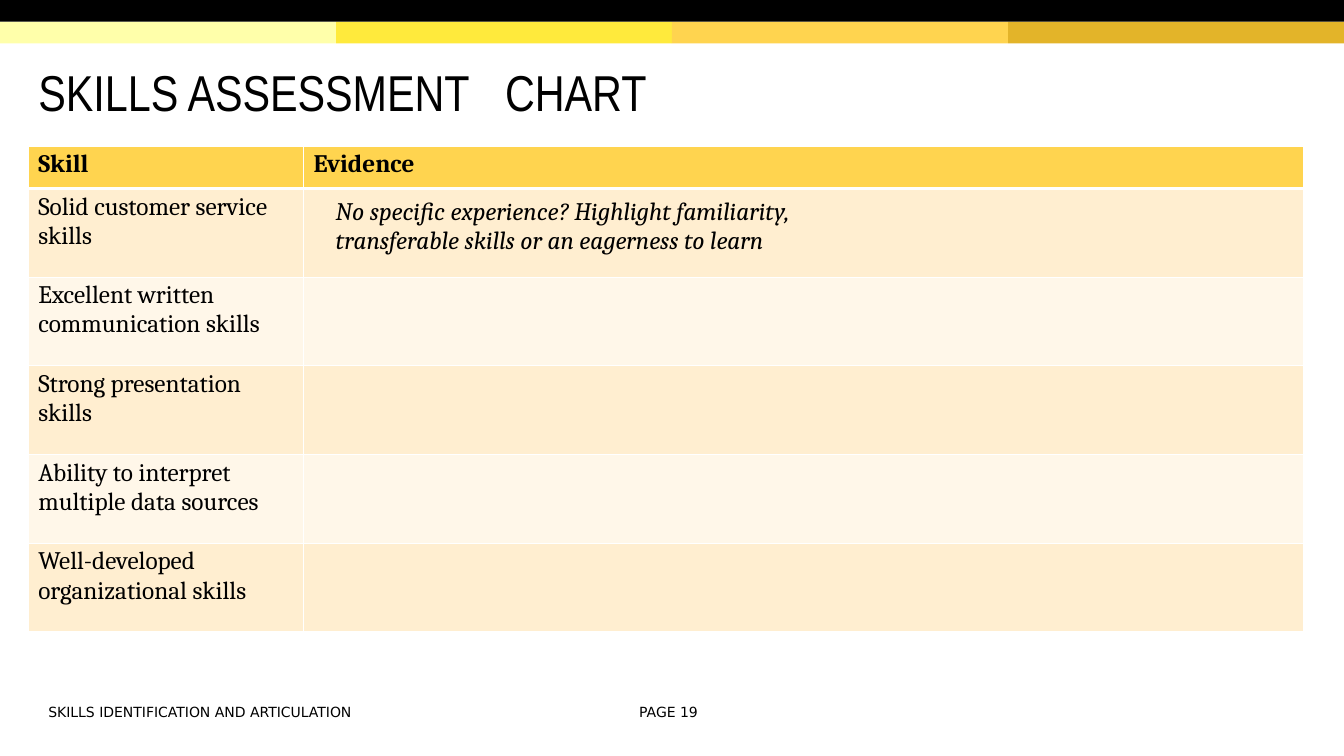
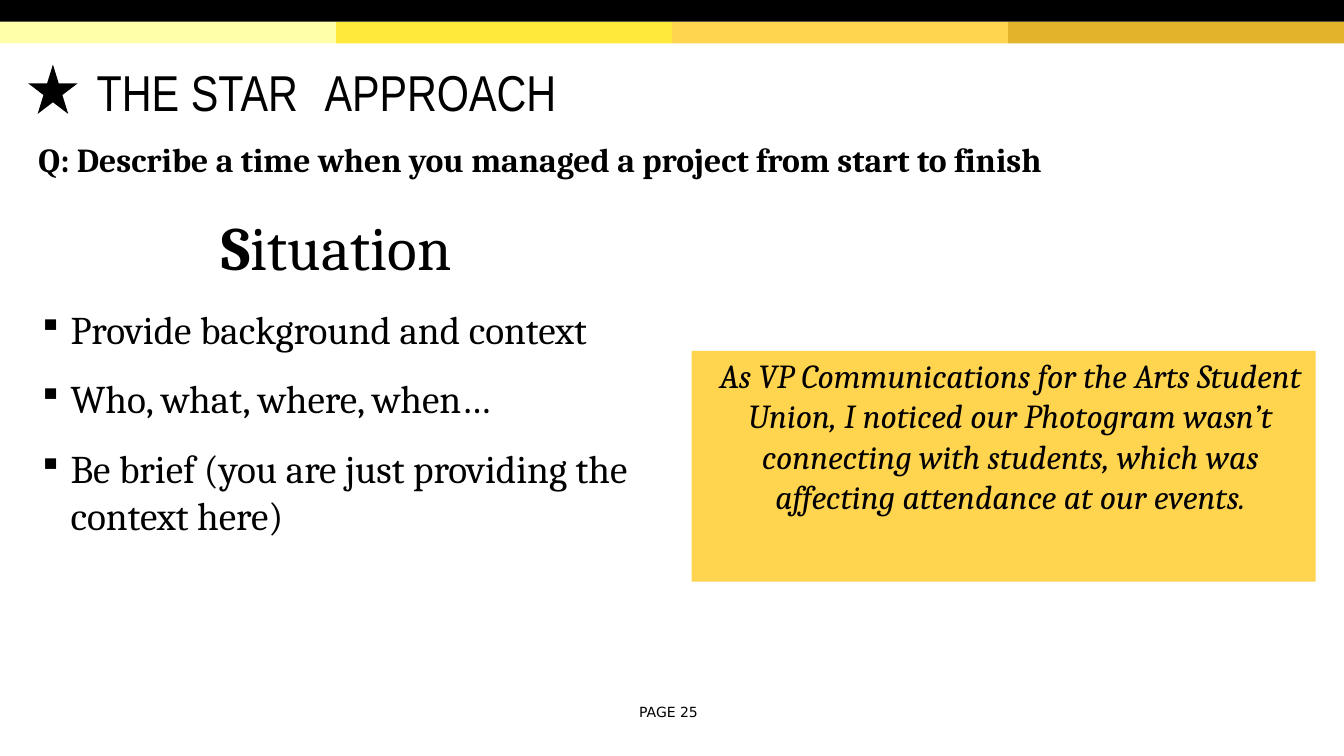
from dataclasses import dataclass

from lxml import etree
from pptx import Presentation
from pptx.dml.color import RGBColor
from pptx.enum.shapes import MSO_SHAPE as Preset
from pptx.enum.text import MSO_ANCHOR as Anchor, PP_ALIGN as Align
from pptx.oxml.ns import qn
from pptx.util import Inches, Pt

WIDTH, HEIGHT = 13.33, 7.5
BLACK, WHITE, GOLD = "000000", "FFFFFF", "FFD44F"
STRIPE_COLOURS = ("FFFFAA", "FFEA3C", GOLD, "E3B429")
ROW_COLOURS = ("FFEED0", "FFF7E9")
STRIPE_HEIGHT = 0.215
HEADING_FONT, BODY_FONT, FOOTER_FONT = "Arial Narrow", "Cambria", "DejaVu Sans"


@dataclass(frozen=True)
class Box:
    left: float
    top: float
    width: float
    height: float

    def lengths(self):
        return [Inches(v) for v in (self.left, self.top, self.width, self.height)]


@dataclass(frozen=True)
class Style:
    face: str
    size: float
    bold: bool = False
    italic: bool = False


@dataclass(frozen=True)
class SkillRow:
    skill: tuple[str, ...]
    evidence: tuple[str, ...] = ()


TITLE = Style(HEADING_FONT, 36)
FOOTER = Style(FOOTER_FONT, 10)
QUESTION = Style(BODY_FONT, 24, bold=True)
STAGE = Style(BODY_FONT, 44)
POINT = Style(BODY_FONT, 28)
EXAMPLE = Style(BODY_FONT, 24, italic=True)
HEADER = Style(BODY_FONT, 18, bold=True)
SKILL = Style(BODY_FONT, 18)
EVIDENCE = Style(BODY_FONT, 18, italic=True)

SKILL_ROWS = (
    SkillRow(("Solid customer service skills",),
             ("No specific experience? Highlight familiarity,",
              "transferable skills or an eagerness to learn")),
    SkillRow(("Excellent written communication skills",)),
    SkillRow(("Strong presentation", "skills")),
    SkillRow(("Ability to interpret multiple data sources",)),
    SkillRow(("Well-developed", "organizational skills")),
)
POINTS = (
    "Provide background and context",
    "Who, what, where, when…",
    "Be brief (you are just providing the context here)",
)


def rgb(colour: str) -> RGBColor:
    return RGBColor.from_string(colour)


def apply_style(paragraph, style: Style) -> None:
    font = paragraph.font
    font.name, font.size = style.face, Pt(style.size)
    font.bold, font.italic = style.bold, style.italic
    font.color.rgb = rgb(BLACK)


def set_indent(paragraph, left: float, first: float = 0) -> None:
    properties = paragraph._p.get_or_add_pPr()
    properties.set("marL", str(Inches(left)))
    properties.set("indent", str(Inches(first)))


def add_tab(paragraph, position: float) -> None:
    tabs = etree.SubElement(paragraph._p.get_or_add_pPr(), qn("a:tabLst"))
    etree.SubElement(tabs, qn("a:tab"), pos=str(Inches(position)), algn="l")


def add_bullet(paragraph) -> None:
    properties = paragraph._p.get_or_add_pPr()
    etree.SubElement(properties, qn("a:buSzPct"), val="84000")
    etree.SubElement(properties, qn("a:buChar"), char="▪")
    set_indent(paragraph, 0.33, -0.32)
    add_tab(paragraph, 0.33)


def prepare_frame(frame, top_inset: float) -> None:
    frame.word_wrap = True
    frame.vertical_anchor = Anchor.TOP
    frame.margin_left = frame.margin_right = frame.margin_bottom = 0
    frame.margin_top = Inches(top_inset)


def add_text(slide, box: Box, text: str, style: Style, top_inset: float = 0.01):
    frame = slide.shapes.add_textbox(*box.lengths()).text_frame
    prepare_frame(frame, top_inset)
    paragraph = frame.paragraphs[0]
    paragraph.text = text
    apply_style(paragraph, style)
    return frame


def add_block(slide, preset: Preset, box: Box, colour: str):
    block = slide.shapes.add_shape(preset, *box.lengths())
    block.shadow.inherit = False
    block.fill.solid()
    block.fill.fore_color.rgb = rgb(colour)
    block.line.fill.background()
    return block


def add_base(deck, page: int):
    slide = deck.slides.add_slide(deck.slide_layouts[6])
    stripe_width = WIDTH / len(STRIPE_COLOURS)
    for i, colour in enumerate(STRIPE_COLOURS):
        stripe = Box(i * stripe_width, STRIPE_HEIGHT, stripe_width, STRIPE_HEIGHT)
        add_block(slide, Preset.RECTANGLE, stripe, colour)
    add_block(slide, Preset.RECTANGLE, Box(0, 0, WIDTH, STRIPE_HEIGHT), BLACK)
    add_text(slide, Box(6.34, 6.97, 0.8, 0.2), f"PAGE {page}", FOOTER)
    return slide


def add_title(slide, left: float, opening: str, closing: str, tab: float) -> None:
    box = Box(left, 0.6, 9.12 - left, 0.63)
    frame = add_text(slide, box, "", TITLE)
    paragraph = frame.paragraphs[0]
    add_tab(paragraph, tab)
    paragraph.text = f"{opening}\t{closing}"
    apply_style(paragraph, TITLE)


def set_borders(cell, **widths: float) -> None:
    properties = cell._tc.get_or_add_tcPr()
    for side in ("L", "R", "T", "B"):
        line = etree.SubElement(properties, qn(f"a:ln{side}"), w=str(Pt(widths.get(side, 1))))
        fill = etree.SubElement(line, qn("a:solidFill"))
        etree.SubElement(fill, qn("a:srgbClr"), val=WHITE)


def fill_cell(cell, lines: tuple[str, ...], style: Style, colour: str,
              indent: float = 0.1, top_inset: float = 0.04, **borders: float) -> None:
    set_borders(cell, **borders)
    cell.fill.solid()
    cell.fill.fore_color.rgb = rgb(colour)
    cell.margin_left = cell.margin_right = cell.margin_bottom = 0
    cell.margin_top = Inches(top_inset)
    cell.text = "\n".join(lines)
    for paragraph in cell.text_frame.paragraphs:
        set_indent(paragraph, indent)
        apply_style(paragraph, style)


def add_skills_table(slide) -> None:
    box = Box(0.28, 1.45, 12.66, 4.8)
    table = slide.shapes.add_table(len(SKILL_ROWS) + 1, 2, *box.lengths()).table
    table.horz_banding = False
    for column, width in zip(table.columns, (2.73, 9.92)):
        column.width = Inches(width)
    for i, row in enumerate(table.rows):
        row.height = Inches(0.88 if i else 0.42)
    for i, heading in enumerate(("Skill", "Evidence")):
        fill_cell(table.cell(0, i), (heading,), HEADER, GOLD, B=3)
    for i, row in enumerate(SKILL_ROWS, 1):
        colour = ROW_COLOURS[(i - 1) % 2]
        top_border = 3 if i == 1 else 1
        fill_cell(table.cell(i, 0), row.skill, SKILL, colour, T=top_border)
        fill_cell(table.cell(i, 1), row.evidence, EVIDENCE, colour, 0.32, 0.09, T=top_border)


def build_skills_slide(deck) -> None:
    slide = add_base(deck, 19)
    add_title(slide, 0.38, "SKILLS ASSESSMENT", "CHART", 4.63)
    add_skills_table(slide)
    add_text(slide, Box(0.48, 6.97, 3.24, 0.2), "SKILLS IDENTIFICATION AND ARTICULATION", FOOTER)


def add_situation(slide) -> None:
    frame = add_text(slide, Box(0.37, 1.69, 5.91, 3.67), "", STAGE, 0.38)
    stage = frame.paragraphs[0]
    stage.alignment = Align.CENTER
    set_indent(stage, 0.03)
    initial = stage.add_run()
    initial.text = "S"
    initial.font.bold = True
    stage.add_run().text = "ituation"
    for point in POINTS:
        paragraph = frame.add_paragraph()
        paragraph.text = point
        add_bullet(paragraph)
        paragraph.space_before = Pt(16)
        apply_style(paragraph, POINT)


def add_example(slide) -> None:
    example = add_block(slide, Preset.RECTANGLE, Box(6.86, 3.48, 6.19, 2.29), GOLD)
    prepare_frame(example.text_frame, 0.04)
    paragraph = example.text_frame.paragraphs[0]
    paragraph.text = ("As VP Communications for the Arts Student Union, I noticed our "
                      "Photogram wasn’t connecting with students, which was affecting "
                      "attendance at our events.")
    paragraph.alignment = Align.CENTER
    set_indent(paragraph, 0.13)
    apply_style(paragraph, EXAMPLE)


def build_star_slide(deck) -> None:
    slide = add_base(deck, 25)
    add_block(slide, Preset.STAR_5_POINT, Box(0.28, 0.64, 0.49, 0.49), BLACK)
    add_title(slide, 0.96, "THE STAR", "APPROACH", 2.26)
    add_text(slide, Box(0.38, 1.37, 11.48, 0.43),
             "Q: Describe a time when you managed a project from start to finish", QUESTION)
    add_situation(slide)
    add_example(slide)


def main() -> None:
    deck = Presentation()
    deck.slide_width, deck.slide_height = Inches(WIDTH), Inches(HEIGHT)
    build_skills_slide(deck)
    build_star_slide(deck)
    deck.save("out.pptx")


if __name__ == "__main__":
    main()
